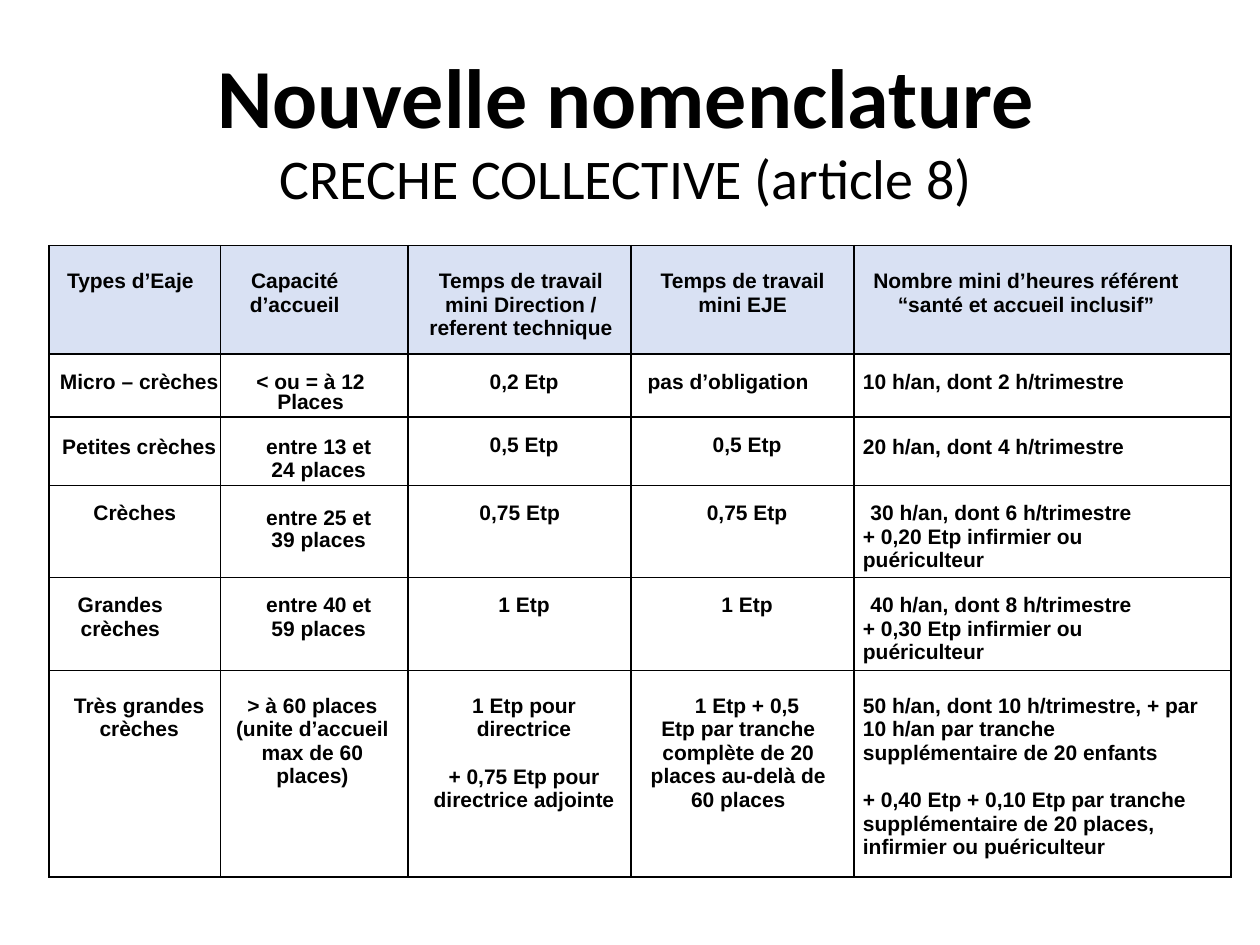
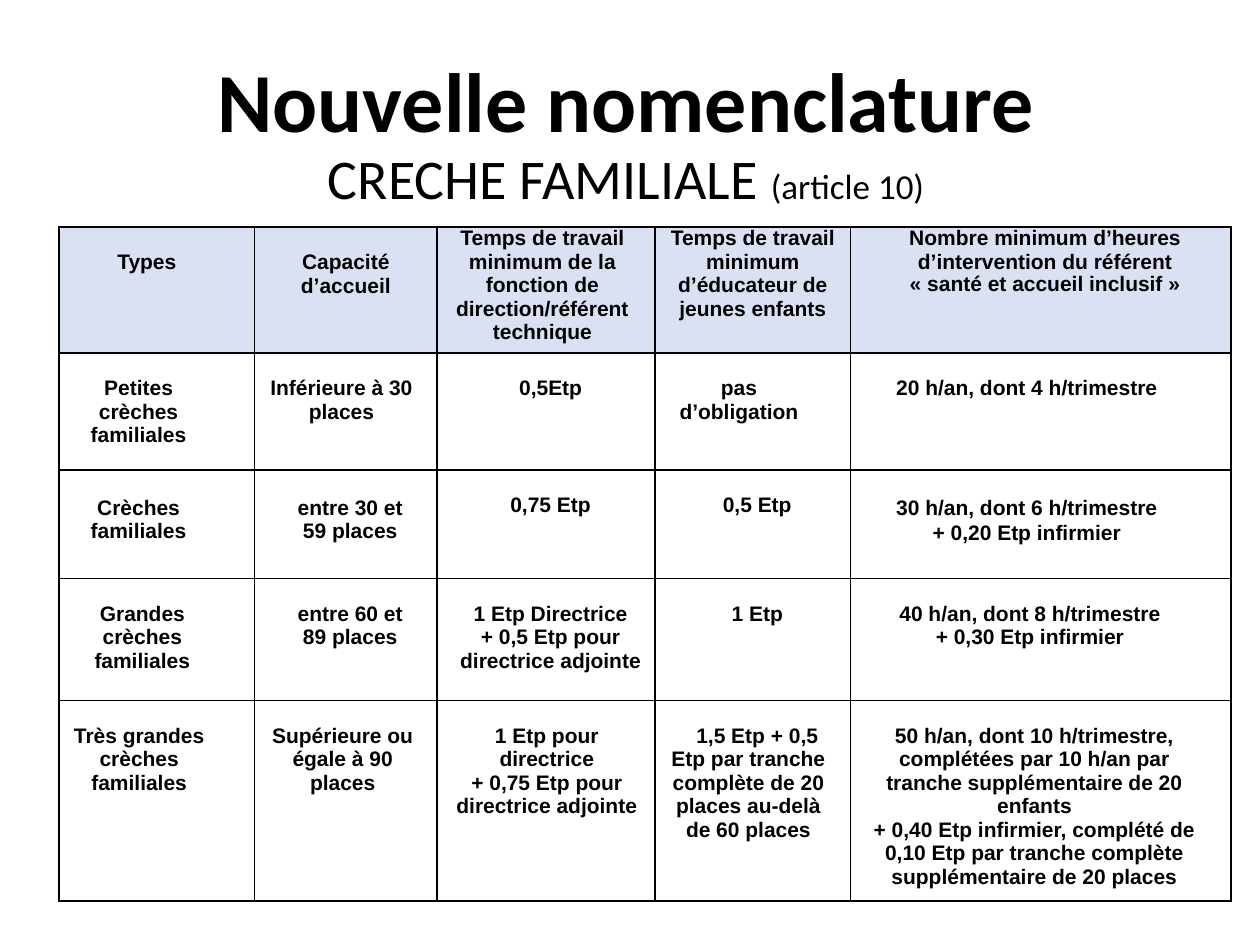
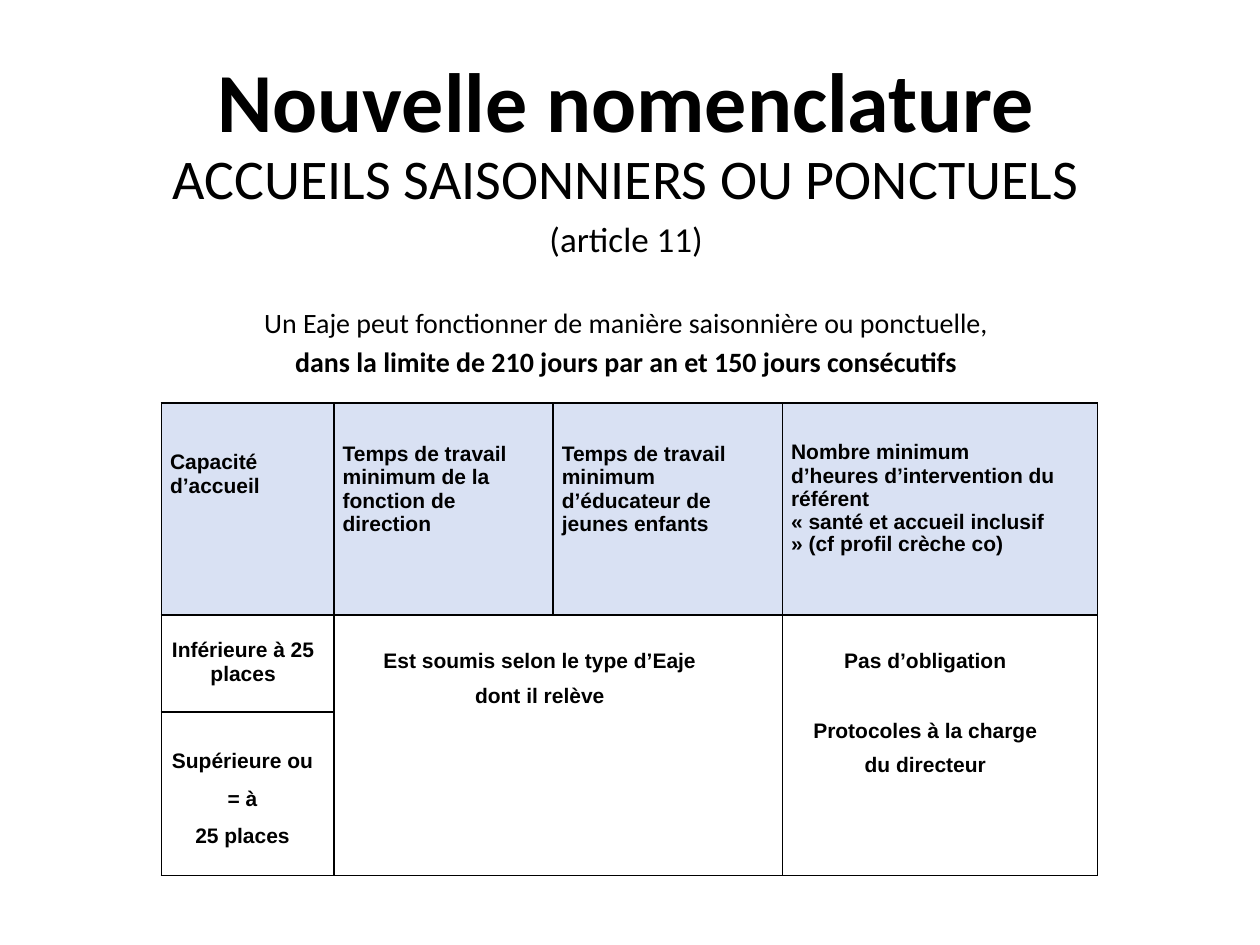
import dataclasses
import pptx
import pptx.dml.color
import pptx.enum.text
import pptx.oxml
import pptx.oxml.ns
import pptx.util

Inches = pptx.util.Inches
Pt = pptx.util.Pt
RGBColor = pptx.dml.color.RGBColor
Align = pptx.enum.text.PP_ALIGN
Anchor = pptx.enum.text.MSO_ANCHOR

BLACK = RGBColor(0x00, 0x00, 0x00)
BLUE = RGBColor(0xD9, 0xE1, 0xF3)
LINE = 13.6
SMALL = 9.2
TIGHT = 12.6
PAD = 0.07


@dataclasses.dataclass
class Cell:
    text: str
    top: float = LINE
    left: float = PAD
    right: float = 0
    align: int = Align.CENTER
    gaps: dict = dataclasses.field(default_factory=dict)
    pitch: dict = dataclasses.field(default_factory=dict)
    dent: float = 0


def note(text, top=SMALL, right=0.4, **more):
    return Cell(text, top, PAD, right, Align.LEFT, **more)


def style(run, size, font, bold=False):
    run.font.size = Pt(size)
    run.font.name = font
    run.font.bold = bold
    run.font.color.rgb = BLACK


def add_box(slide, top, height, anchor):
    box = slide.shapes.add_textbox(Inches(0.47), Inches(top), Inches(9), Inches(height))
    frame = box.text_frame
    frame.word_wrap = True
    frame.vertical_anchor = anchor
    return frame


def add_title(slide, top):
    frame = add_box(slide, top, 1.25, Anchor.MIDDLE)
    frame.text = "Nouvelle nomenclature"
    para = frame.paragraphs[0]
    para.alignment = Align.CENTER
    style(para.runs[0], 48, "Calibri", True)


def add_body(slide, lines):
    frame = add_box(slide, 1.09, 5.26, Anchor.TOP)
    for i, (gap, runs) in enumerate(lines):
        para = frame.add_paragraph() if i else frame.paragraphs[0]
        para.alignment = Align.CENTER
        para.space_before = Pt(gap)
        for text, size, bold in runs:
            run = para.add_run()
            run.text = text
            style(run, size, "Calibri", bold)


def add_edges(cell):
    props = cell._tc.get_or_add_tcPr()
    for side in "LRTB":
        props.append(pptx.oxml.parse_xml(
            f'<a:ln{side} {pptx.oxml.ns.nsdecls("a")} w="12700"><a:solidFill>'
            f'<a:srgbClr val="{BLACK}"/></a:solidFill></a:ln{side}>'))


def fill_cell(cell, data):
    cell.margin_left = Inches(data.left)
    cell.margin_right = Inches(data.right)
    cell.margin_top = Pt(data.top)
    cell.margin_bottom = 0
    cell.text_frame.text = data.text
    for i, para in enumerate(cell.text_frame.paragraphs):
        para.alignment = data.align
        if i in data.gaps:
            para.space_before = Pt(data.gaps[i])
        if i in data.pitch:
            para.line_spacing = Pt(data.pitch[i])
        if i == 0 and data.dent:
            para._p.get_or_add_pPr().set("indent", str(Inches(data.dent)))
        for run in para.runs:
            style(run, 12, "Arial", True)


def add_grid(slide, place, cols, rows, cells, spans=()):
    frame = slide.shapes.add_table(len(rows), len(cols), *map(Inches, place))
    table = frame.table
    table.first_row = table.horz_banding = False
    for col, width in zip(table.columns, cols):
        col.width = Inches(width)
    for row, height in zip(table.rows, rows):
        row.height = Inches(height)
    for first, last in spans:
        table.cell(*first).merge(table.cell(*last))
    for r, line in enumerate(cells):
        for c, data in enumerate(line):
            cell = table.cell(r, c)
            add_edges(cell)
            if r == 0:
                cell.fill.solid()
                cell.fill.fore_color.rgb = BLUE
            else:
                cell.fill.background()
            if data:
                fill_cell(cell, data)


def add_group(slide):
    add_title(slide, 0.13)
    add_body(slide, [(0, [("CRECHE COLLECTIVE (article 8)", 32, False)])])
    cells = [
        [Cell("Types d’Eaje", right=0.14),
         Cell("Capacité d’accueil", right=0.38),
         Cell("Temps de travail mini Direction / referent technique", left=0.1, right=0.08),
         Cell("Temps de travail mini EJE", left=0.1, right=0.1),
         Cell("Nombre mini d’heures référent\n“santé et accueil inclusif”", right=0.33)],
        [Cell("Micro – crèches", SMALL),
         Cell("< ou = à 12\nPlaces", SMALL, right=0.13, pitch={1: 11.6}),
         Cell("0,2 Etp", SMALL),
         Cell("pas d’obligation", SMALL, right=0.3),
         note("10 h/an, dont 2 h/trimestre")],
        [Cell("Petites crèches", 10.4),
         Cell("entre 13 et\n24 places", 10.4),
         Cell("0,5 Etp", SMALL),
         Cell("0,5 Etp", SMALL),
         note("20 h/an, dont 4 h/trimestre", 10.4)],
        [Cell("Crèches", SMALL, left=0),
         Cell("entre 25 et\n39 places", TIGHT, pitch={0: TIGHT, 1: TIGHT}),
         Cell("0,75 Etp", SMALL, left=0),
         Cell("0,75 Etp", SMALL),
         note("30 h/an, dont 6 h/trimestre\n+ 0,20 Etp infirmier ou puériculteur", dent=0.06)],
        [Cell("Grandes crèches", SMALL, right=0.3),
         Cell("entre 40 et\n59 places", SMALL),
         Cell("1 Etp", SMALL),
         Cell("1 Etp", SMALL),
         note("40 h/an, dont 8 h/trimestre\n+ 0,30 Etp infirmier ou puériculteur", dent=0.06)],
        [Cell("Très grandes crèches"),
         Cell("> à 60 places (unite d’accueil max de 60 places)", right=0.1),
         Cell("1 Etp pour\ndirectrice\n+ 0,75 Etp pour directrice adjointe", gaps={2: LINE}),
         Cell("1 Etp + 0,5\nEtp par tranche complète de 20 places au-delà de 60 places",
              right=0.14, dent=0.14),
         note("50 h/an, dont 10 h/trimestre, + par 10 h/an par tranche supplémentaire"
              " de 20 enfants\n+ 0,40 Etp + 0,10 Etp par tranche supplémentaire"
              " de 20 places, infirmier ou puériculteur", LINE, 0.22, gaps={1: LINE})],
    ]
    add_grid(slide, (0.39, 1.95, 9.38, 5.03), (1.36, 1.49, 1.77, 1.77, 2.99),
             (0.86, 0.5, 0.49, 0.59, 0.74, 1.64), cells)


def add_home(slide):
    add_title(slide, 0.16)
    add_body(slide, [(0, [("CRECHE FAMILIALE ", 32, False), ("(article 10)", 20, False)])])
    cells = [
        [Cell("Types", left=0, right=0.16),
         Cell("Capacité\nd’accueil", left=0),
         Cell("Temps de travail minimum de la fonction de direction/référent technique",
              0, left=0, right=0.06),
         Cell("Temps de travail minimum d’éducateur de jeunes enfants", 0, right=PAD),
         Cell("Nombre minimum d’heures d’intervention du référent\n"
              "« santé et accueil inclusif »", 0, pitch={1: TIGHT})],
        [Cell("Petites crèches familiales", right=0.36),
         Cell("Inférieure à 30 places", right=0.14),
         Cell("0,5Etp"),
         Cell("pas d’obligation", right=0.29),
         Cell("20 h/an, dont 4 h/trimestre", right=0.29)],
        [Cell("Crèches familiales", 14.8, right=0.36),
         Cell("entre 30 et\n59 places", 14.8),
         Cell("0,75 Etp"),
         Cell("0,5 Etp"),
         Cell("30 h/an, dont 6 h/trimestre\n+ 0,20 Etp infirmier", 14.8, right=0.29,
              gaps={1: 1.2})],
        [Cell("Grandes crèches familiales", right=0.3),
         Cell("entre 60 et\n89 places"),
         Cell("1 Etp Directrice\n+ 0,5 Etp pour directrice adjointe"),
         Cell("1 Etp"),
         Cell("40 h/an, dont 8 h/trimestre\n+ 0,30 Etp infirmier", right=0.24)],
        [Cell("Très grandes crèches familiales", right=0.35),
         Cell("Supérieure ou égale à 90 places", right=0.12),
         Cell("1 Etp pour\ndirectrice\n+ 0,75 Etp pour directrice adjointe", right=0.06),
         Cell("1,5 Etp + 0,5\nEtp par tranche complète de 20 places au-delà de 60 places",
              right=0.14, dent=0.14),
         Cell("50 h/an, dont 10 h/trimestre, complétées par 10 h/an par tranche"
              " supplémentaire de 20 enfants\n+ 0,40 Etp infirmier, complété de 0,10 Etp"
              " par tranche complète supplémentaire de 20 places", left=0.12, right=0.22)],
    ]
    add_grid(slide, (0.47, 1.8, 9.3, 5.43), (1.55, 1.45, 1.73, 1.55, 3.02),
             (0.87, 0.93, 0.86, 0.97, 1.59), cells)


def add_season(slide):
    add_title(slide, 0.16)
    add_body(slide, [
        (0, [("ACCUEILS SAISONNIERS OU PONCTUELS", 32, False)]),
        (4, [("(article 11)", 20, False)]),
        (26, [("Un Eaje peut fonctionner de manière saisonnière ou ponctuelle,", 16, False)]),
        (3.2, [("dans la limite de 210 jours par an et 150 jours consécutifs", 16, True)]),
    ])
    cells = [
        [note("Capacité d’accueil", 2 * LINE, 0),
         note("Temps de travail minimum de la fonction de direction", 22.2, 0.1),
         note("Temps de travail minimum d’éducateur de jeunes enfants", 22.2, 0.1),
         note("Nombre minimum d’heures d’intervention du référent\n"
              "« santé et accueil inclusif » (cf profil crèche co)", 21.5, 0.31,
              pitch={1: TIGHT})],
        [Cell("Inférieure à 25 places", left=0.06, right=0.13),
         Cell("Est soumis selon le type d’Eaje\ndont il relève", 19.8, right=0.36,
              gaps={1: 6.3}),
         None,
         Cell("Pas d’obligation\nProtocoles à la charge\ndu directeur", 19.8, right=0.3,
              gaps={1: 26.4, 2: 6.3})],
        [Cell("Supérieure ou\n= à\n25 places", 21.6, left=0.05, right=0.13,
              gaps={1: 8, 2: 8}),
         None, None, None],
    ]
    add_grid(slide, (1.28, 3.2, 7.42, 3.75), (1.37, 1.74, 1.82, 2.5), (1.68, 0.77, 1.3),
             cells, [((1, 1), (2, 2)), ((1, 3), (2, 3))])


def main():
    deck = pptx.Presentation()
    deck.slide_width = Inches(10)
    deck.slide_height = Inches(7.5)
    for draw in (add_group, add_home, add_season):
        draw(deck.slides.add_slide(deck.slide_layouts[6]))
    deck.save("out.pptx")


if __name__ == "__main__":
    main()
